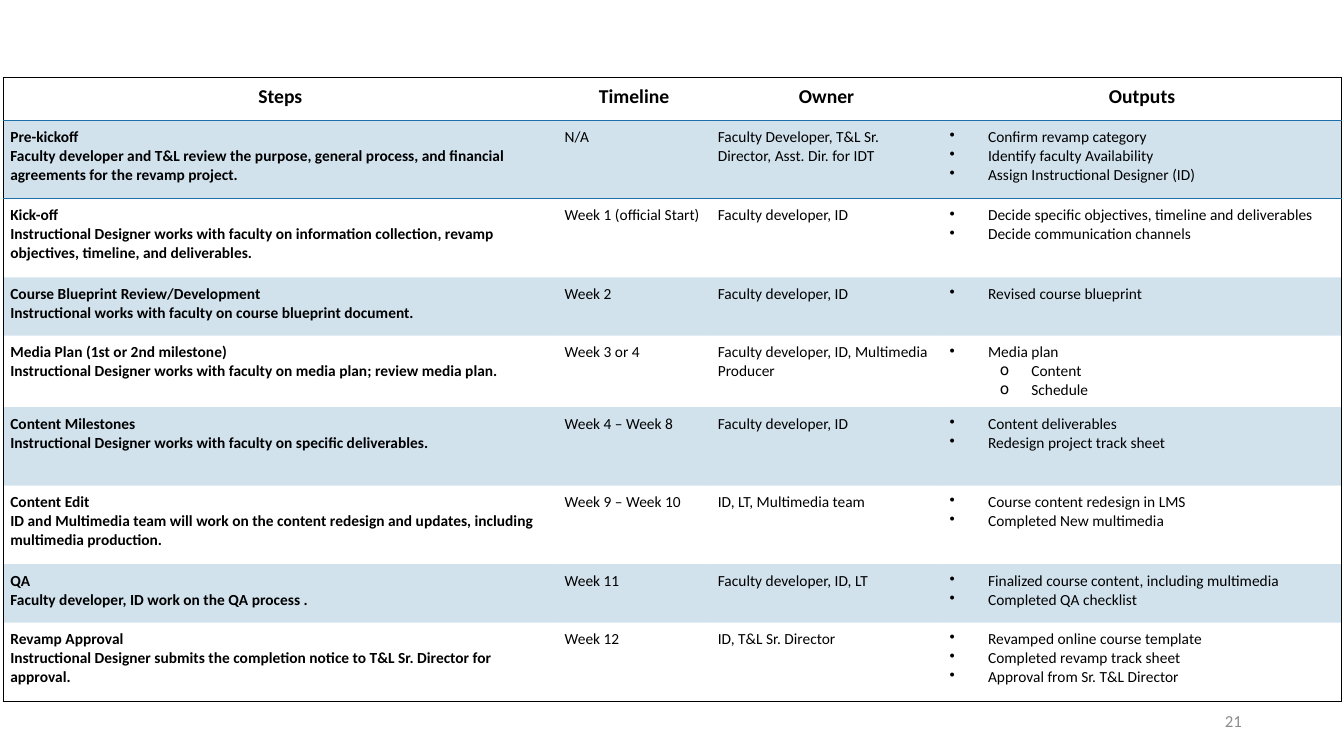
import pptx
import pptx.dml.color
import pptx.enum.text
import pptx.oxml.ns
from lxml import etree
from pptx.util import Cm

BLACK = pptx.dml.color.RGBColor(0x00, 0x00, 0x00)
BLUE = pptx.dml.color.RGBColor(0x1D, 0x6F, 0xA9)
GREY = pptx.dml.color.RGBColor(0x8C, 0x8C, 0x8C)
FONT = "Calibri"
NO_GRID_STYLE = "{2D5ABB26-0587-4C30-8999-92F81FD0307C}"
ALIGN = pptx.enum.text.PP_ALIGN

COLUMN_WIDTHS = (13.97, 3.86, 5.84, 10.06)
ROW_HEIGHTS = (1.07, 1.98, 1.98, 1.47, 1.47, 1.98, 1.98, 1.47, 1.98)
HEADINGS = ("Steps", "Timeline", "Owner", "Outputs")

# Each step: name, description, timeline, owner, outputs as (level, text)
STEPS = (
    ("Pre-kickoff",
     "Faculty developer and T&L review the purpose, general process, and financial "
     "agreements for the revamp project.",
     "N/A", "Faculty Developer, T&L Sr. Director, Asst. Dir. for IDT",
     ((0, "Confirm revamp category"), (0, "Identify faculty Availability"),
      (0, "Assign Instructional Designer (ID)"))),
    ("Kick-off",
     "Instructional Designer works with faculty on information collection, revamp "
     "objectives, timeline, and deliverables.",
     "Week 1 (official Start)", "Faculty developer, ID",
     ((0, "Decide specific objectives, timeline and deliverables"),
      (0, "Decide communication channels"))),
    ("Course Blueprint Review/Development",
     "Instructional works with faculty on course blueprint document.",
     "Week 2", "Faculty developer, ID",
     ((0, "Revised course blueprint"),)),
    ("Media Plan (1st or 2nd milestone)",
     "Instructional Designer works with faculty on media plan; review media plan.",
     "Week 3 or 4", "Faculty developer, ID, Multimedia Producer",
     ((0, "Media plan"), (1, "Content"), (1, "Schedule"))),
    ("Content Milestones",
     "Instructional Designer works with faculty on specific deliverables.",
     "Week 4 – Week 8", "Faculty developer, ID",
     ((0, "Content deliverables"), (0, "Redesign project track sheet"))),
    ("Content Edit",
     "ID and Multimedia team will work on the content redesign and updates, "
     "including multimedia production.",
     "Week 9 – Week 10", "ID, LT, Multimedia team",
     ((0, "Course content redesign in LMS"), (0, "Completed New multimedia"))),
    ("QA",
     "Faculty developer, ID work on the QA process .",
     "Week 11", "Faculty developer, ID, LT",
     ((0, "Finalized course content, including multimedia"),
      (0, "Completed QA checklist"))),
    ("Revamp Approval",
     "Instructional Designer submits the completion notice to T&L Sr. Director "
     "for approval.",
     "Week 12", "ID, T&L Sr. Director",
     ((0, "Revamped online course template"), (0, "Completed revamp track sheet"),
      (0, "Approval from Sr. T&L Director"))),
)

# Bullet character, left margin and hanging indent in cm, by level
BULLETS = (("•", 0.97, -0.97), ("o", 2.06, -0.79))


def add_child(parent, tag, **attributes):
    return etree.SubElement(parent, pptx.oxml.ns.qn(tag), attributes)


def format_text(para, size, color=BLACK, bold=False, align=ALIGN.LEFT):
    para.alignment = align
    for span in para.runs:
        span.font.name = FONT
        span.font.size = pptx.util.Pt(size)
        span.font.bold = bold
        span.font.color.rgb = color


def add_bullet(para, level):
    character, margin, indent = BULLETS[level]
    para.level = level
    properties = para._p.get_or_add_pPr()
    properties.set("marL", str(Cm(margin)))
    properties.set("indent", str(Cm(indent)))
    color = add_child(properties, "a:buClr")
    add_child(color, "a:srgbClr", val=str(BLACK))
    add_child(properties, "a:buChar", char=character)


def fill_cell(cell, lines, size=11, bold=False, align=ALIGN.LEFT):
    cell.margin_left = cell.margin_right = Cm(0.18)
    cell.margin_top = cell.margin_bottom = Cm(0.18)
    cell.text_frame.text = "\n".join(lines)
    for para in cell.text_frame.paragraphs:
        format_text(para, size, bold=bold, align=align)


def shade_cell(cell):
    """Fill the cell with blue at 20 % opacity."""
    cell.fill.solid()
    cell.fill.fore_color.rgb = BLUE
    color = cell._tc.tcPr.find(".//" + pptx.oxml.ns.qn("a:srgbClr"))
    add_child(color, "a:alpha", val="20000")


def set_borders(cell, borders):
    """Draw 1 pt lines; borders lists (side, colour) in the order L, R, T, B."""
    properties = cell._tc.get_or_add_tcPr()
    for position, (side, color) in enumerate(borders):
        line = add_child(properties, f"a:ln{side}", w=str(pptx.util.Pt(1)))
        fill = add_child(line, "a:solidFill")
        add_child(fill, "a:srgbClr", val=str(color))
        properties.insert(position, line)


def frame_table(table):
    last_row, last_column = len(table.rows) - 1, len(table.columns) - 1
    for row in range(last_row + 1):
        for column in range(last_column + 1):
            edges = (("L", BLACK, column == 0),
                     ("R", BLACK, column == last_column),
                     ("T", BLACK, row == 0),
                     ("T", BLUE, row == 1),
                     ("B", BLUE, row == 0),
                     ("B", BLACK, row == last_row))
            set_borders(table.cell(row, column),
                        [(side, color) for side, color, drawn in edges if drawn])


def add_steps_table(page):
    frame = page.shapes.add_table(
        len(ROW_HEIGHTS), len(COLUMN_WIDTHS), Cm(0.08), Cm(1.96),
        Cm(sum(COLUMN_WIDTHS)), Cm(sum(ROW_HEIGHTS)))
    table = frame.table
    table.horz_banding = False
    style = table._tbl.tblPr.find(pptx.oxml.ns.qn("a:tableStyleId"))
    style.text = NO_GRID_STYLE
    for column, width in zip(table.columns, COLUMN_WIDTHS):
        column.width = Cm(width)
    for row, height in zip(table.rows, ROW_HEIGHTS):
        row.height = Cm(height)

    for column, heading in enumerate(HEADINGS):
        fill_cell(table.cell(0, column), [heading], 14, True, ALIGN.CENTER)
    for row, (name, description, timeline, owner, outputs) in enumerate(STEPS, 1):
        fill_cell(table.cell(row, 0), [name, description], bold=True)
        fill_cell(table.cell(row, 1), [timeline])
        fill_cell(table.cell(row, 2), [owner])
        output_cell = table.cell(row, 3)
        fill_cell(output_cell, [text for level, text in outputs])
        for para, (level, text) in zip(output_cell.text_frame.paragraphs, outputs):
            add_bullet(para, level)
        if row % 2:
            for cell in table.rows[row].cells:
                shade_cell(cell)
    frame_table(table)


def add_page_number(page, number):
    box = page.shapes.add_textbox(Cm(23.93), Cm(17.65), Cm(7.62), Cm(1.02))
    box.text_frame.word_wrap = True
    box.text_frame.vertical_anchor = pptx.enum.text.MSO_ANCHOR.MIDDLE
    box.text_frame.text = number
    format_text(box.text_frame.paragraphs[0], 12, GREY, align=ALIGN.RIGHT)


def main():
    deck = pptx.Presentation()
    deck.slide_width, deck.slide_height = Cm(33.87), Cm(19.05)
    page = deck.slides.add_slide(deck.slide_layouts[6])
    add_steps_table(page)
    add_page_number(page, "21")
    deck.save("out.pptx")


if __name__ == "__main__":
    main()
